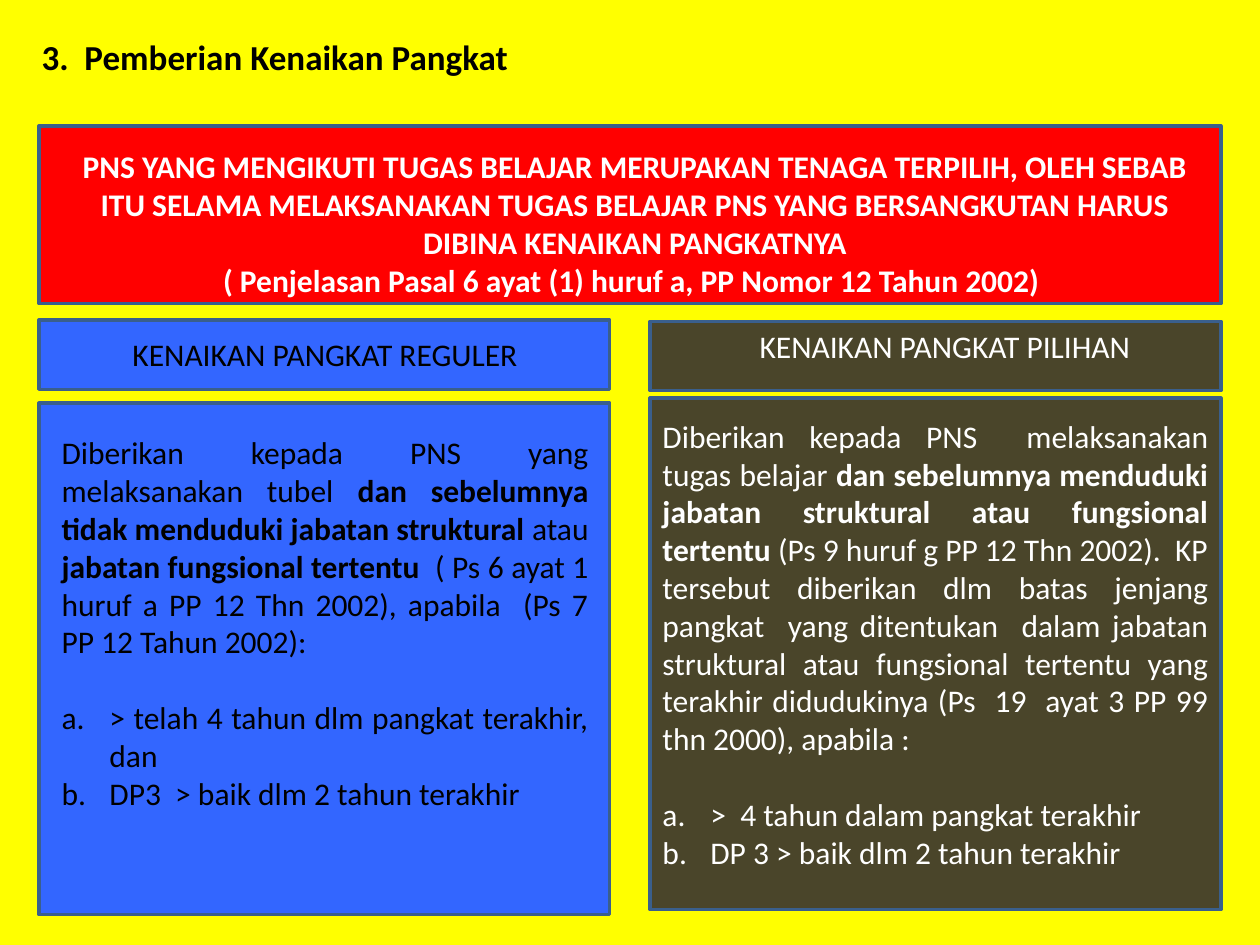
"""Build the slide on promotion in rank for civil servants on study assignment."""
from lxml.etree import SubElement
from pptx import Presentation
from pptx.dml.color import RGBColor
from pptx.enum.shapes import MSO_SHAPE as Shape
from pptx.enum.text import MSO_ANCHOR as Anchor, PP_ALIGN as Align
from pptx.oxml.ns import qn
from pptx.util import Inches, Pt

BLACK, WHITE, RED, BLUE, OLIVE = "000000", "FFFFFF", "FF0000", "3366FF", "4A452A"
LEFT, COLUMN, GAP = 0.31, 4.53, 0.32
RIGHT = LEFT + COLUMN + GAP


def add_rectangle(left, top, width, height, color):
    shape = slide.shapes.add_shape(
        Shape.RECTANGLE, Inches(left), Inches(top), Inches(width), Inches(height))
    shape.shadow.inherit = False
    shape.fill.solid()
    shape.fill.fore_color.rgb = RGBColor.from_string(color)
    shape.line.color.rgb = RGBColor.from_string("3A5F8C")
    shape.line.width = Pt(2)


def write(paragraphs, box, shape=None, color=BLACK, size=18, bold=False,
          align=Align.LEFT, items=()):
    left, top, width, height = map(Inches, box)
    if shape is None:
        shape = slide.shapes.add_textbox(left, top, width, height)
    shape.left, shape.top, shape.width, shape.height = left, top, width, height
    frame = shape.text_frame
    frame.word_wrap, frame.vertical_anchor = True, Anchor.TOP
    entries = list(paragraphs) + list(items)
    for index, text in enumerate(entries):
        paragraph = frame.add_paragraph() if index else frame.paragraphs[0]
        paragraph.alignment = align
        for part, piece in enumerate(text.split("*")):
            run = paragraph.add_run()
            run.text = piece
            run.font.name, run.font.size = "Calibri", Pt(size)
            run.font.bold = bold or part % 2 == 1
            run.font.color.rgb = RGBColor.from_string(color)
        if index >= len(paragraphs):
            if index == len(paragraphs):
                paragraph.space_before = Pt(21.6)
            properties = paragraph._p.get_or_add_pPr()
            properties.set("marL", str(Inches(0.38)))
            properties.set("indent", str(-Inches(0.38)))
            SubElement(properties, qn("a:buFont"), typeface="+mj-lt")
            SubElement(properties, qn("a:buAutoNum"), type="alphaLcPeriod")


presentation = Presentation()
presentation.slide_width, presentation.slide_height = Inches(10), Inches(7.5)
slide = presentation.slides.add_slide(presentation.slide_layouts[5])
slide.background.fill.solid()
slide.background.fill.fore_color.rgb = RGBColor.from_string("FFFF00")

write(["3.  Pemberian Kenaikan Pangkat"], (0.23, 0.23, 9.45, 0.44),
      shape=slide.shapes.title, size=20, bold=True)

add_rectangle(LEFT, 1, 2 * COLUMN + GAP, 1.41, RED)
write(["PNS YANG MENGIKUTI TUGAS BELAJAR MERUPAKAN TENAGA TERPILIH, OLEH SEBAB ITU SELAMA "
       "MELAKSANAKAN TUGAS BELAJAR PNS YANG BERSANGKUTAN HARUS DIBINA KENAIKAN PANGKATNYA",
       "( Penjelasan Pasal 6 ayat (1) huruf a, PP Nomor 12 Tahun 2002) "],
      (0.39, 1.12, 9.3, 1.31), color=WHITE, bold=True, align=Align.CENTER)

panels = [
    (LEFT, 2.54, 3.2, BLUE, BLACK,
     "KENAIKAN PANGKAT REGULER", (0.39, 2.61, 4.38, 0.4),
     "Diberikan kepada PNS yang melaksanakan tubel *dan sebelumnya tidak menduduki jabatan "
     "struktural* atau *jabatan fungsional tertentu*  ( Ps 6 ayat 1 huruf a PP 12 Thn 2002), "
     "apabila  (Ps 7 PP 12 Tahun 2002):", (0.39, 3.39, 4.38, 3.13),
     ["> telah 4 tahun dlm pangkat terakhir, dan", "DP3  > baik dlm 2 tahun terakhir"]),
    (RIGHT, 2.55, 3.16, OLIVE, WHITE,
     "KENAIKAN PANGKAT PILIHAN", (5.31, 2.55, 4.38, 0.4),
     "Diberikan kepada PNS  melaksanakan tugas belajar *dan sebelumnya menduduki jabatan "
     "struktural atau fungsional tertentu *(Ps 9 huruf g PP 12 Thn 2002).  KP tersebut "
     "diberikan dlm batas jenjang pangkat  yang ditentukan  dalam jabatan struktural atau "
     "fungsional tertentu yang terakhir didudukinya (Ps  19  ayat 3 PP 99 thn 2000), "
     "apabila :", (RIGHT, 3.26, COLUMN, 3.74),
     [">  4 tahun dalam pangkat terakhir", "DP 3 > baik dlm 2 tahun terakhir"]),
]
for left, head_top, body_top, fill, ink, heading, head_box, body, body_box, items in panels:
    add_rectangle(left, body_top, COLUMN, 4.06, fill)
    add_rectangle(left, head_top, COLUMN, 0.55, fill)
    write([heading], head_box, color=ink, align=Align.CENTER)
    write([body], body_box, color=ink, align=Align.JUSTIFY, items=items)

presentation.save("out.pptx")
